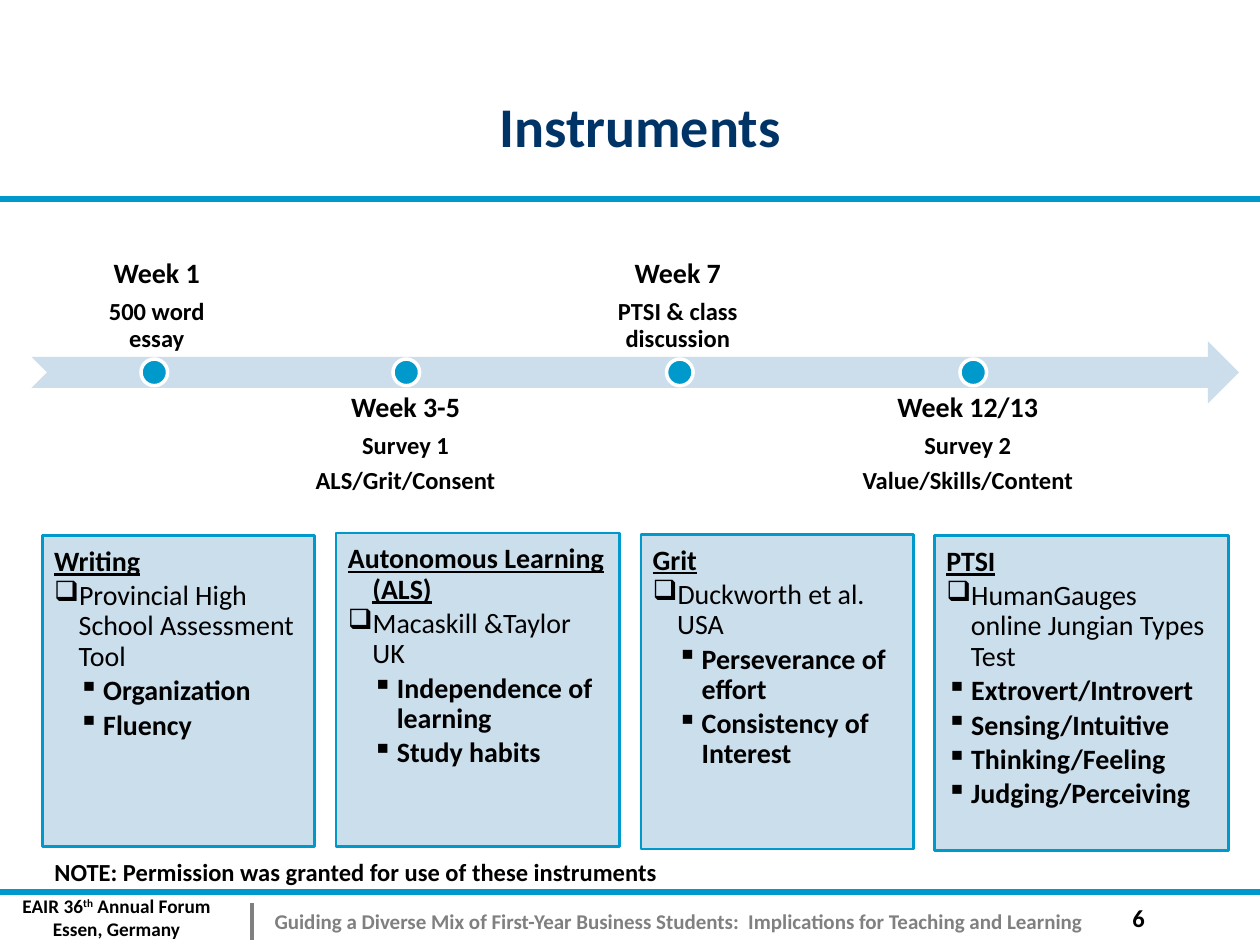
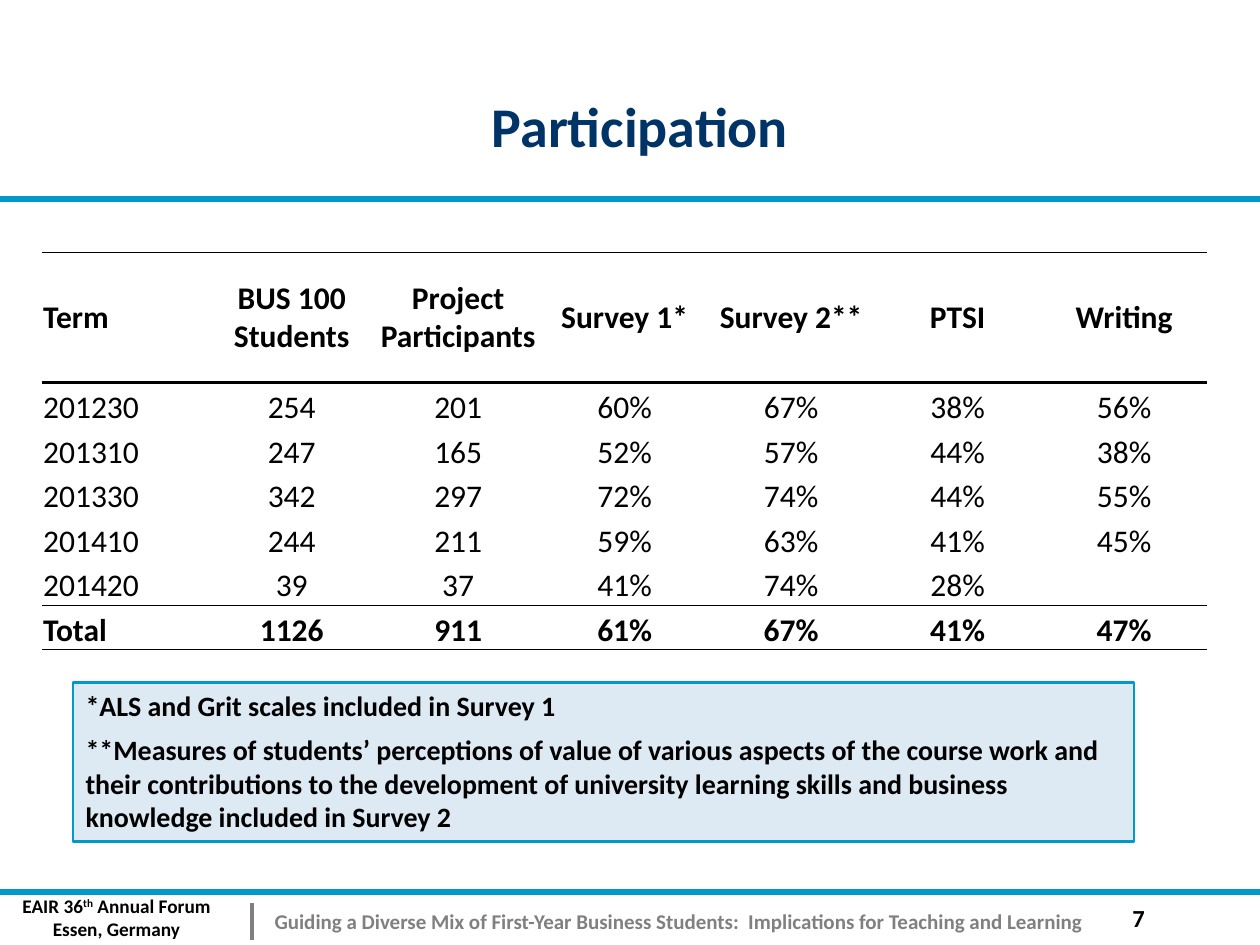
from dataclasses import dataclass
from typing import Any, NamedTuple, Optional

from lxml.etree import SubElement
from pptx import Presentation
from pptx.dml.color import RGBColor
from pptx.enum.shapes import MSO_CONNECTOR as Connector, MSO_SHAPE as Preset
from pptx.enum.text import MSO_ANCHOR as Anchor, PP_ALIGN as Align
from pptx.oxml.ns import qn
from pptx.util import Pt


# Theme
@dataclass(frozen=True)
class Theme:
    font: str = "Calibri"
    accent: str = "0099CC"
    title: str = "003366"
    text: str = "000000"
    muted: str = "808080"
    white: str = "FFFFFF"
    arrow: str = "CCDEEC"
    card: str = "CBDEEC"
    note: str = "DDEAF3"
    title_size: float = 32
    table_size: float = 18
    body_size: float = 16
    small_size: float = 14
    footer_size: float = 12
    event_size: float = 11


THEME = Theme()


class Box(NamedTuple):
    left: float
    top: float
    width: float
    height: float


class Insets(NamedTuple):
    left: float = 7.2
    top: float = 3.6
    right: float = 7.2
    bottom: float = 3.6


class Phrase(NamedTuple):
    text: str
    raised: bool = False


@dataclass(frozen=True)
class Line:
    phrases: tuple[Phrase, ...]
    size: float = THEME.body_size
    color: str = THEME.text
    bold: bool = True
    underline: bool = False
    align: Any = Align.LEFT
    spacing: float = 1.0
    after: float = 0
    margin: float = 0
    hanging: float = 0
    bullet: str = ""


class Milestone(NamedTuple):
    center: float
    label_left: float
    label_width: float
    above: bool
    week: str
    details: tuple[str, ...]


class Card(NamedTuple):
    top: float
    width: float
    height: float
    heading: str
    source: str
    traits: tuple[str, ...]
    trait_margin: float = 28


# Content
EVENT = ((Phrase("EAIR 36"), Phrase("th", True), Phrase(" Annual Forum")), (Phrase("Essen, Germany"),))
TALK = "Guiding a Diverse Mix of First-Year Business Students:  Implications for Teaching and Learning"

MILESTONES = (
    Milestone(88.2, 47.5, 84.2, True, "Week 1", ("500 word essay",)),
    Milestone(232.2, 145.4, 172.8, False, "Week 3-5", ("Survey 1", "ALS/Grit/Consent")),
    Milestone(388.5, 324.7, 125.3, True, "Week 7", ("PTSI & class discussion",)),
    Milestone(556.2, 440, 226, False, "Week 12/13", ("Survey 2", "Value/Skills/Content")),
)

CARDS = (
    Card(306, 155.6, 177.8, "Writing", "Provincial High School Assessment Tool",
         ("Organization", "Fluency")),
    Card(304.6, 162, 179.3, "Autonomous Learning (ALS)", "Macaskill &Taylor UK",
         ("Independence of learning", "Study habits")),
    Card(305.3, 155.6, 180, "Grit", "Duckworth et al. USA",
         ("Perseverance of effort", "Consistency of Interest")),
    Card(306, 167.8, 180, "PTSI", "HumanGauges online Jungian Types Test",
         ("Extrovert/Introvert", "Sensing/Intuitive", "Thinking/Feeling", "Judging/Perceiving"), 14.2),
)

PARTICIPATION = (
    ("Term", "BUS 100 Students", "Project Participants", "Survey 1*", "Survey 2**", "PTSI", "Writing"),
    ("201230", "254", "201", "60%", "67%", "38%", "56%"),
    ("201310", "247", "165", "52%", "57%", "44%", "38%"),
    ("201330", "342", "297", "72%", "74%", "44%", "55%"),
    ("201410", "244", "211", "59%", "63%", "41%", "45%"),
    ("201420", "39", "37", "41%", "74%", "28%", ""),
    ("Total", "1126", "911", "61%", "67%", "41%", "47%"),
)

FOOTNOTES = (
    "*ALS and Grit scales included in Survey 1",
    "**Measures of students’ perceptions of value of various aspects of the course work and their "
    "contributions to the development of university learning skills and business knowledge "
    "included in Survey 2",
)


# Drawing helpers
def apply(target: Any, values: dict[str, Any]) -> None:
    for name, value in values.items():
        setattr(target, name, value)


def rgb(color: str) -> RGBColor:
    return RGBColor.from_string(color)


def points(values: tuple[float, ...]) -> list[int]:
    return [Pt(value) for value in values]


def plain(text: str, **format_values: Any) -> Line:
    return Line((Phrase(text),), **format_values)


def write(frame: Any, lines: list[Line]) -> None:
    for index, line in enumerate(lines):
        paragraph = frame.add_paragraph() if index else frame.paragraphs[0]
        apply(paragraph, {"alignment": line.align, "line_spacing": line.spacing,
                          "space_after": Pt(line.after)})
        properties = paragraph._p.get_or_add_pPr()
        if line.hanging:
            properties.set("marL", str(Pt(line.margin)))
            properties.set("indent", str(-Pt(line.hanging)))
        if line.bullet:
            SubElement(properties, qn("a:buChar")).set("char", line.bullet)
        for phrase in line.phrases:
            run = paragraph.add_run()
            run.text = phrase.text
            apply(run.font, {"name": THEME.font, "size": Pt(line.size), "bold": line.bold,
                             "underline": line.underline})
            run.font.color.rgb = rgb(line.color)
            if phrase.raised:
                run._r.get_or_add_rPr().set("baseline", "30000")


def fill_frame(shape: Any, lines: list[Line], insets: Insets, anchor: Any) -> None:
    frame = shape.text_frame
    left, top, right, bottom = points(insets)
    apply(frame, {"word_wrap": True, "vertical_anchor": anchor, "margin_left": left,
                  "margin_top": top, "margin_right": right, "margin_bottom": bottom})
    write(frame, lines)


def add_text(slide: Any, box: Box, lines: list[Line], insets: Insets = Insets(),
             anchor: Any = Anchor.TOP) -> None:
    fill_frame(slide.shapes.add_textbox(*points(box)), lines, insets, anchor)


def add_shape(slide: Any, preset: Any, box: Box, fill: str, outline: Optional[str] = None,
              weight: float = 1.5) -> Any:
    shape = slide.shapes.add_shape(preset, *points(box))
    shape.shadow.inherit = False
    shape.fill.solid()
    shape.fill.fore_color.rgb = rgb(fill)
    if outline:
        shape.line.color.rgb = rgb(outline)
        shape.line.width = Pt(weight)
    else:
        shape.line.fill.background()
    return shape


def add_rule(slide: Any, ends: tuple[float, float, float, float], color: str, weight: float) -> None:
    connector = slide.shapes.add_connector(Connector.STRAIGHT, *points(ends))
    connector.line.color.rgb = rgb(color)
    connector.line.width = Pt(weight)
    SubElement(connector._element.spPr, qn("a:effectLst"))


def set_borders(cell: Any, weights: dict[str, float]) -> None:
    properties = cell._tc.get_or_add_tcPr()
    for index, side in enumerate("LRTB"):
        border = SubElement(properties, qn(f"a:ln{side}"))
        properties.insert(index, border)
        if side in weights:
            border.set("w", str(Pt(weights[side])))
            fill = SubElement(border, qn("a:solidFill"))
            SubElement(fill, qn("a:srgbClr")).set("val", THEME.text)
        else:
            SubElement(border, qn("a:noFill"))


# Shared slide frame: title, bands and footer
def add_framed_slide(presentation: Any, title: str, number: int) -> Any:
    slide = presentation.slides.add_slide(presentation.slide_layouts[6])
    for height in (113.8, 509.8):
        add_rule(slide, (0, height, 720, height), THEME.accent, 3.25)
    add_text(slide, Box(3.6, 507.6, 126, 34),
             [Line(phrases, size=THEME.event_size, align=Align.CENTER) for phrases in EVENT])
    add_text(slide, Box(149.8, 514.2, 490, 24),
             [plain(TALK, size=THEME.footer_size, color=THEME.muted)], Insets(top=4.9))
    add_text(slide, Box(640, 512.6, 40, 24), [plain(str(number), size=THEME.small_size)])
    add_rule(slide, (144, 516.2, 144, 537.1), THEME.muted, 2.75)
    add_text(slide, Box(59.8, 48.2, 612, 46.1),
             [plain(title, size=THEME.title_size, color=THEME.title, align=Align.CENTER)],
             anchor=Anchor.BOTTOM)
    return slide


# Instruments: timeline and cards
def add_milestone(slide: Any, milestone: Milestone) -> None:
    label = {"align": Align.CENTER, "spacing": 0.9}
    lines = [plain(milestone.week, after=5.6, **label)]
    lines += [plain(text, size=THEME.small_size, after=4.9, **label) for text in milestone.details]
    box = Box(milestone.label_left, 150 if milestone.above else 216, milestone.label_width, 60)
    add_text(slide, box, lines, Insets(8.5, 8.5, 8.5, 8.5),
             Anchor.BOTTOM if milestone.above else Anchor.TOP)
    size = 15.2
    add_shape(slide, Preset.OVAL, Box(milestone.center - size / 2, 205.2, size, size),
              THEME.accent, THEME.white, 2)


def add_card(slide: Any, card: Card, left: float) -> None:
    shape = add_shape(slide, Preset.RECTANGLE, Box(left, card.top, card.width, card.height),
                      THEME.card, THEME.accent)
    layout = {"spacing": 0.9, "after": 2.4, "hanging": 14}
    lines = [
        plain(card.heading, underline=True, margin=14, **layout),
        plain(card.source, bold=False, bullet="❑", margin=14, **layout),
    ]
    lines += [plain(trait, bullet="▪", margin=card.trait_margin, **layout) for trait in card.traits]
    fill_frame(shape, lines, Insets(6.7, 6.7, 8.6, 10), Anchor.TOP)


def build_instruments(presentation: Any) -> None:
    slide = add_framed_slide(presentation, "Instruments", 6)
    add_shape(slide, Preset.NOTCHED_RIGHT_ARROW, Box(18, 195.1, 690, 35.4), THEME.arrow)
    for milestone in MILESTONES:
        add_milestone(slide, milestone)
    left, gap = 24.3, 12.2
    for card in CARDS:
        add_card(slide, card, left)
        left += card.width + gap
    add_text(slide, Box(24, 486, 432, 24),
             [plain("NOTE: Permission was granted for use of these instruments", size=THEME.small_size)])


# Participation: table and footnotes
def add_participation_table(slide: Any) -> None:
    rows, columns = len(PARTICIPATION), len(PARTICIPATION[0])
    header_height, row_height = 74.6, 25.45
    box = Box(24, 144, 666, header_height + row_height * (rows - 1))
    table = slide.shapes.add_table(rows, columns, *points(box)).table
    apply(table, {"first_row": False, "horz_banding": False})
    for column in table.columns:
        column.width = Pt(box.width / columns)
    borders = {0: {"T": 0.5, "B": 2}, 1: {"T": 2},
               rows - 2: {"B": 0.5}, rows - 1: {"T": 0.5, "B": 0.5}}
    for row, values in enumerate(PARTICIPATION):
        table.rows[row].height = Pt(row_height if row else header_height)
        for column, value in enumerate(values):
            cell = table.cell(row, column)
            apply(cell, {"margin_left": Pt(0.7), "margin_top": Pt(0.7), "margin_right": Pt(0.7),
                         "margin_bottom": 0,
                         "vertical_anchor": Anchor.BOTTOM if row else Anchor.MIDDLE})
            cell.fill.background()
            set_borders(cell, borders.get(row, {}))
            if value:
                write(cell.text_frame, [plain(value, size=THEME.table_size, bold=row in (0, rows - 1),
                                              align=Align.CENTER if column else Align.LEFT)])


def build_participation(presentation: Any) -> None:
    slide = add_framed_slide(presentation, "Participation", 7)
    add_participation_table(slide)
    note = add_shape(slide, Preset.RECTANGLE, Box(41.8, 390, 606.2, 90.8), THEME.note, THEME.accent)
    first, second = FOOTNOTES
    fill_frame(note, [plain(first, after=6), plain(second)], Insets(), Anchor.TOP)


def main() -> None:
    presentation = Presentation()
    apply(presentation, {"slide_width": Pt(720), "slide_height": Pt(540)})
    build_instruments(presentation)
    build_participation(presentation)
    presentation.save("out.pptx")


if __name__ == "__main__":
    main()
